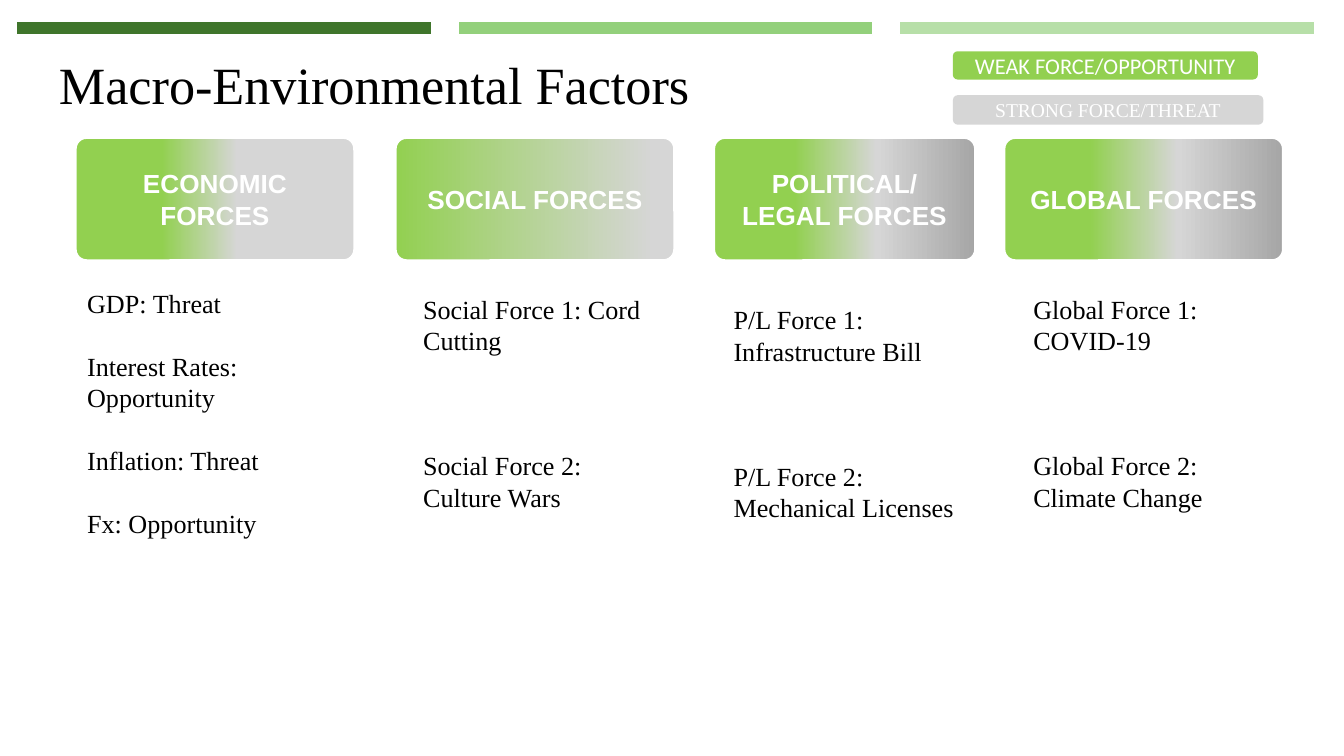
from copy import deepcopy

from pptx import Presentation
from pptx.dml.color import RGBColor
from pptx.enum.shapes import MSO_SHAPE
from pptx.enum.text import MSO_ANCHOR, PP_ALIGN
from pptx.util import Pt

WHITE = RGBColor(0xFF, 0xFF, 0xFF)
BLACK = RGBColor(0x00, 0x00, 0x00)
DARK_GREEN = RGBColor(0x3F, 0x75, 0x2B)
MID_GREEN = RGBColor(0x93, 0xD0, 0x7B)
PALE_GREEN = RGBColor(0xB7, 0xDF, 0xA8)
WEAK = RGBColor(0x92, 0xD0, 0x50)
STRONG = RGBColor(0xD6, 0xD6, 0xD6)
STRONGEST = RGBColor(0xA5, 0xA5, 0xA5)

SERIF = "Times New Roman"
TITLE_FONT = {"name": SERIF, "size": Pt(28)}
BODY_FONT = {"name": SERIF, "size": Pt(14)}
HEADER_FONT = {"name": "Arial", "size": Pt(14), "bold": True}
WEAK_FONT = {"name": "Calibri", "size": Pt(12)}
STRONG_FONT = {"name": SERIF, "size": Pt(10.5)}

LINE_PITCH = 1.2
BODY_LINE = 14 * LINE_PITCH

MOSTLY_STRONG = [(0, WEAK), (0.31, WEAK), (0.58, STRONG), (1, STRONG)]
BALANCED = [(0, WEAK), (0.92, STRONG)]
TOWARD_STRONGEST = [(0, WEAK), (0.31, WEAK), (0.62, STRONG), (1, STRONGEST)]

# header text, left, width, gradient stops
HEADERS = [
    (["ECONOMIC FORCES"], 39.6, 151.2, MOSTLY_STRONG),
    (["SOCIAL FORCES"], 211, 151.2, BALANCED),
    (["POLITICAL/", "LEGAL FORCES"], 381.6, 141.8, TOWARD_STRONGEST),
    (["GLOBAL FORCES"], 537.1, 151.2, TOWARD_STRONGEST),
]

# factors, left, top, height, blank lines between factors
FACTORS = [
    (["GDP: Threat", "Interest Rates: Opportunity", "Inflation: Threat",
      "Fx: Opportunity"], 39.6, 150.5, 177.1, 1),
    (["Social Force 1: Cord Cutting", "Social Force 2: Culture Wars"],
     219.6, 153.4, 227.5, 3),
    (["P/L Force 1: Infrastructure Bill", "P/L Force 2: Mechanical Licenses"],
     385.9, 159.1, 211, 3),
    (["Global Force 1: COVID-19", "Global Force 2: Climate Change"],
     546.5, 153.4, 193.7, 3),
]


def write(shape, lines, font, color, align, anchor, margins=(7.2, 3.6), gap=0):
    """Fill a shape with paragraphs; margins are (sides, top and bottom)."""
    tf = shape.text_frame
    side, edge = (Pt(m) for m in margins)
    frame = {"word_wrap": True, "vertical_anchor": anchor,
             "margin_left": side, "margin_right": side,
             "margin_top": edge, "margin_bottom": edge}
    for name, value in frame.items():
        setattr(tf, name, value)
    for i, line in enumerate(lines):
        p = tf.add_paragraph() if i else tf.paragraphs[0]
        p.alignment = align
        p.line_spacing = Pt(font["size"].pt * LINE_PITCH)
        p.space_before = Pt(gap if i else 0)
        r = p.add_run()
        r.text = line
        for name, value in font.items():
            setattr(r.font, name, value)
        r.font.color.rgb = color


def add_text(s, box, lines, font, **layout):
    tb = s.shapes.add_textbox(*map(Pt, box))
    write(tb, lines, font, BLACK, PP_ALIGN.LEFT, MSO_ANCHOR.TOP, **layout)


def add_block(s, kind, box, line_width=0):
    """Add a shape with a white outline, or none when line_width is 0."""
    sp = s.shapes.add_shape(kind, *map(Pt, box))
    sp.shadow.inherit = False
    if line_width:
        sp.line.color.rgb = WHITE
        sp.line.width = Pt(line_width)
    else:
        sp.line.fill.background()
    return sp


def fill_solid(sp, color):
    sp.fill.solid()
    sp.fill.fore_color.rgb = color


def fill_gradient(sp, stops):
    """Apply a left-to-right gradient of (position, colour) stops."""
    sp.fill.gradient()
    sp.fill.gradient_angle = 0
    gs = sp._element.spPr.xpath(".//a:gs")
    for _ in stops[len(gs):]:
        gs[-1].addnext(deepcopy(gs[-1]))
    for stop, (position, color) in zip(sp.fill.gradient_stops, stops):
        stop.position = position
        stop.color.rgb = color


def add_bars(s):
    for i, color in enumerate([DARK_GREEN, MID_GREEN, PALE_GREEN]):
        box = (8.8 + i * 236.5, 11.7, 222.3, 7.2)
        fill_solid(add_block(s, MSO_SHAPE.RECTANGLE, box, 0.75), color)


def add_legend(s, box, label, color, font):
    sp = add_block(s, MSO_SHAPE.FLOWCHART_ALTERNATE_PROCESS, box)
    fill_solid(sp, color)
    write(sp, [label], font, WHITE, PP_ALIGN.CENTER, MSO_ANCHOR.MIDDLE)


def add_header(s, lines, left, width, stops):
    box = (left, 72.9, width, 67.5)
    sp = add_block(s, MSO_SHAPE.ROUNDED_RECTANGLE, box, 3)
    sp.adjustments[0] = 0.1
    fill_gradient(sp, stops)
    margins = (7.2, 3.6) if lines == ["ECONOMIC FORCES"] else (0, 0)
    write(sp, lines, HEADER_FONT, WHITE, PP_ALIGN.CENTER, MSO_ANCHOR.MIDDLE,
          margins)


def main():
    prs = Presentation()
    prs.slide_width, prs.slide_height = Pt(720), Pt(405)
    s = prs.slides.add_slide(prs.slide_layouts[6])

    add_text(s, (24.5, 20.9, 365.8, 41.8), ["Macro-Environmental Factors"],
             TITLE_FONT, margins=(7.2, 7.2))
    add_bars(s)
    for header in HEADERS:
        add_header(s, *header)
    add_legend(s, (510.5, 27.5, 163.4, 15.1), "WEAK FORCE/OPPORTUNITY",
               WEAK, WEAK_FONT)
    add_legend(s, (510.5, 51, 166.3, 15.8), "STRONG FORCE/THREAT",
               STRONG, STRONG_FONT)
    for lines, left, top, height, blanks in FACTORS:
        add_text(s, (left, top, 133.9, height), lines, BODY_FONT,
                 gap=blanks * BODY_LINE)

    prs.save("out.pptx")


if __name__ == "__main__":
    main()
